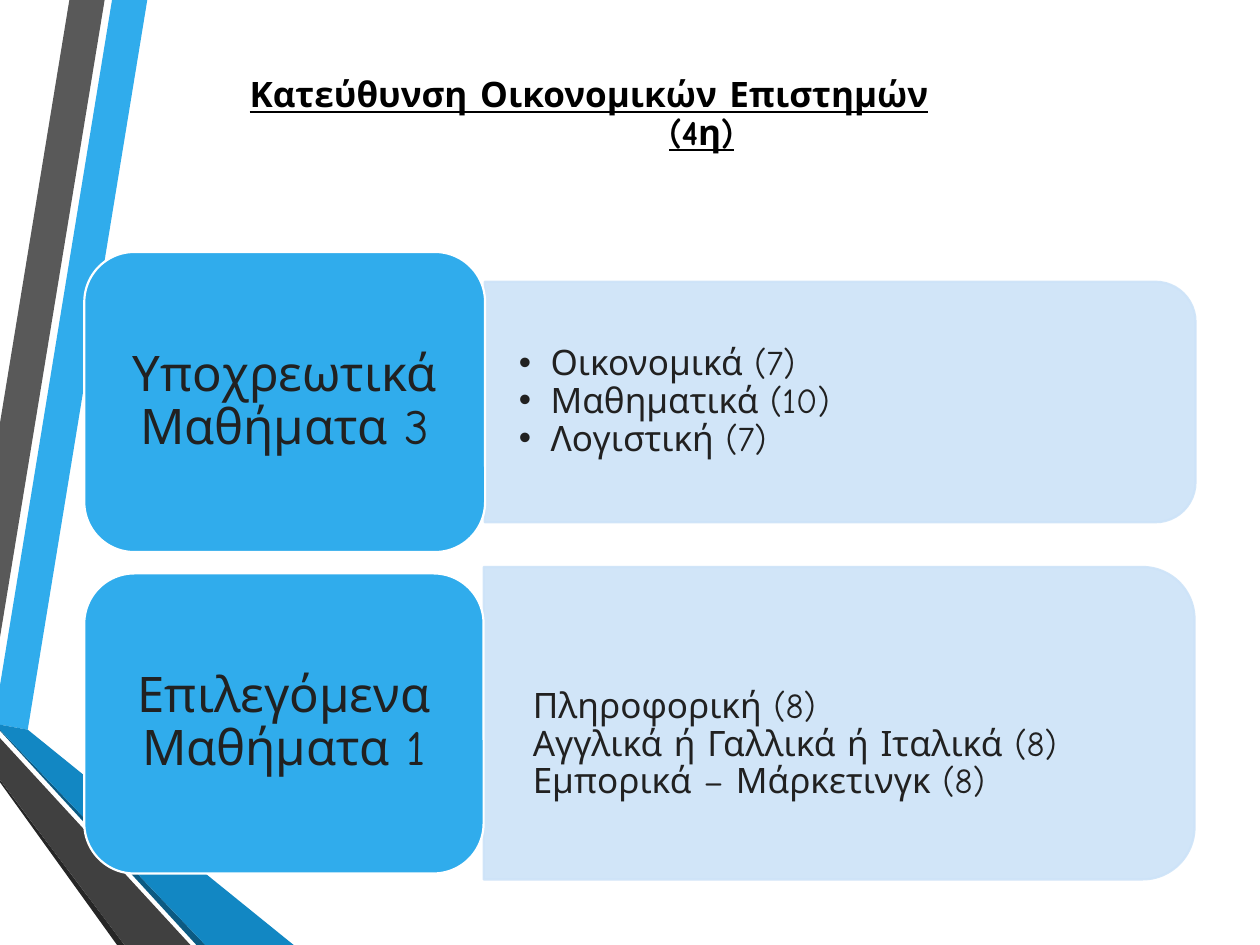
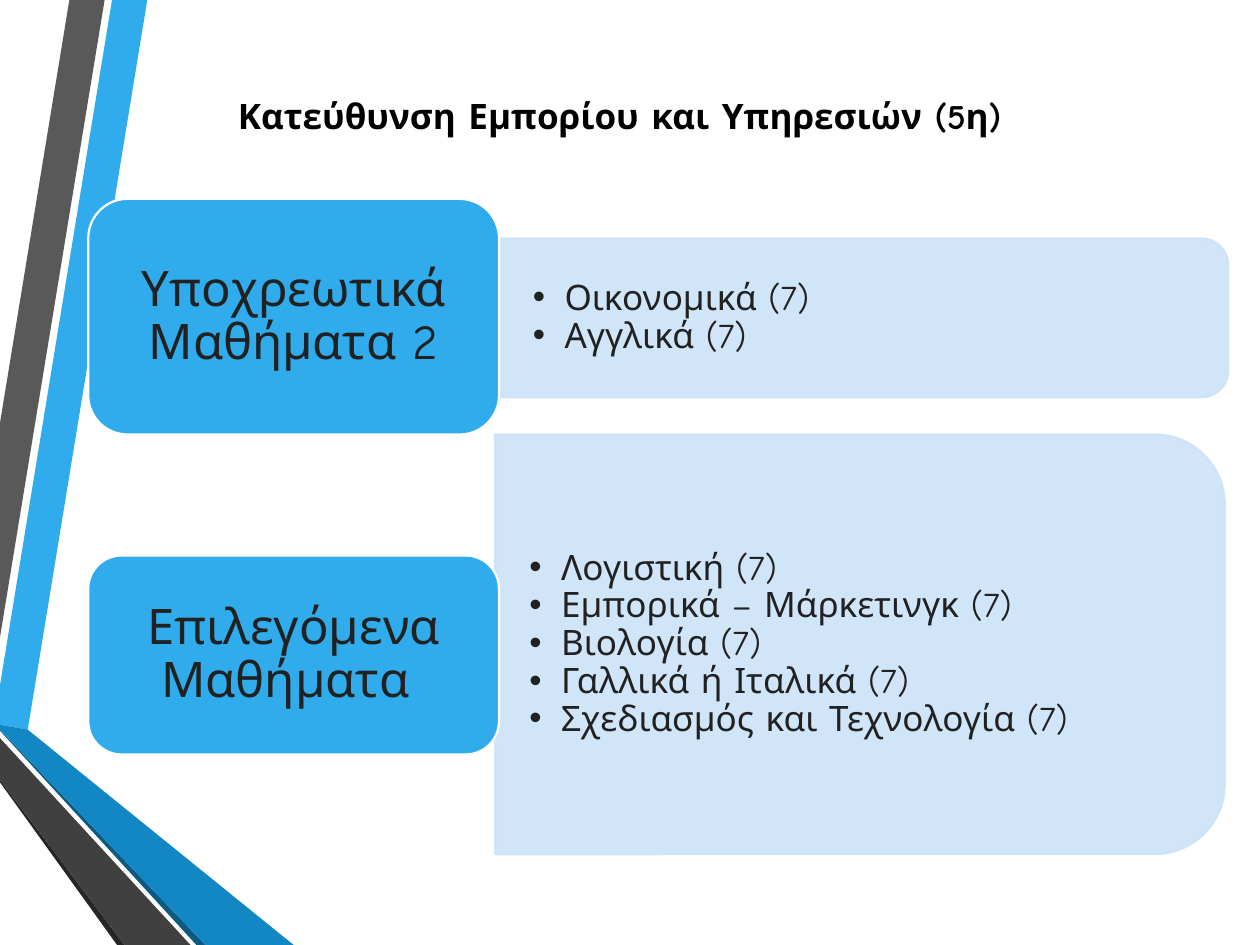
import lxml.etree
import pptx
import pptx.dml.color
import pptx.enum.shapes
import pptx.enum.text
import pptx.oxml.ns
import pptx.util

Cm = pptx.util.Cm
Pt = pptx.util.Pt
RGBColor = pptx.dml.color.RGBColor
Shapes = pptx.enum.shapes.MSO_SHAPE
Align = pptx.enum.text.PP_ALIGN
qn = pptx.oxml.ns.qn

SKY = RGBColor(0x30, 0xAC, 0xEC)
BLUE = RGBColor(0x12, 0x87, 0xC3)
DEEP_BLUE = RGBColor(0x0C, 0x5A, 0x82)
PALE_BLUE = RGBColor(0xCD, 0xE3, 0xF8)
GREY = RGBColor(0x59, 0x59, 0x59)
DARK_GREY = RGBColor(0x40, 0x40, 0x40)
CHARCOAL = RGBColor(0x26, 0x26, 0x26)
INK = RGBColor(0x21, 0x21, 0x21)
BLACK = RGBColor(0, 0, 0)
WHITE = RGBColor(0xFF, 0xFF, 0xFF)

FONT = "Comic Neue"
TWO_CONTENT = 3

# Corner points in cm of the folded ribbons along the left edge
RIBBONS = [
    (SKY, [(0, 13.82), (0, 14.61), (0.56, 14.71), (2.97, 0), (2.26, 0)]),
    (GREY, [(2.11, 0), (1.4, 0), (0, 8.53), (0, 12.85)]),
    (CHARCOAL, [(0, 15.72), (0, 15.77), (2.36, 19.05), (2.51, 19.05)]),
    (DEEP_BLUE, [(0, 14.71), (0, 14.73), (3.96, 19.05), (4.14, 19.05)]),
    (BLUE, [(0, 14.71), (4.14, 19.05), (5.92, 19.05), (0.56, 14.71), (0, 14.61)]),
    (DARK_GREY, [(0, 15.72), (2.51, 19.05), (3.84, 19.05), (0, 14.88)]),
]


def write(frame, lines, size, color=INK, bold=False, underline=False,
          align=Align.LEFT, indents=None, hanging=0, bullet=None, insets=(0.25, 0.13)):
    """Fill a text frame, one paragraph a line; indents and insets are in cm."""
    frame.word_wrap = True
    frame.auto_size = pptx.enum.text.MSO_AUTO_SIZE.NONE
    frame.vertical_anchor = pptx.enum.text.MSO_ANCHOR.MIDDLE
    frame.margin_left = frame.margin_right = Cm(insets[0])
    frame.margin_top = frame.margin_bottom = Cm(insets[1])
    for number, line in enumerate(lines):
        paragraph = frame.paragraphs[0] if number == 0 else frame.add_paragraph()
        paragraph.alignment = align
        paragraph.line_spacing = 0.9
        paragraph.space_before = paragraph.space_after = Pt(0)
        run = paragraph.add_run()
        run.text = line
        run.font.name = FONT
        run.font.size = Pt(size)
        run.font.bold = bold
        run.font.underline = underline
        run.font.color.rgb = color
        properties = paragraph._p.get_or_add_pPr()
        properties.set("marL", str(Cm(indents[number] if indents else 0)))
        properties.set("indent", str(-Cm(hanging)))
        if bullet:
            lxml.etree.SubElement(properties, qn("a:buChar"), char=bullet)
        else:
            lxml.etree.SubElement(properties, qn("a:buNone"))


def place(shape, left, top, width, height):
    shape.left, shape.top = Cm(left), Cm(top)
    shape.width, shape.height = Cm(width), Cm(height)


class Deck:
    def __init__(self):
        self.presentation = pptx.Presentation()
        self.presentation.slide_width = Cm(25.4)
        self.presentation.slide_height = Cm(19.05)
        self.layout = self.presentation.slide_layouts[TWO_CONTENT]
        self.slide = None

    def start_slide(self):
        self.slide = self.presentation.slides.add_slide(self.layout)
        self.bodies = iter(list(self.slide.placeholders)[1:])

    def paint(self, shape, fill, line=None):
        shape.shadow.inherit = False
        shape.fill.solid()
        shape.fill.fore_color.rgb = fill
        if line is None:
            shape.line.fill.background()
        else:
            shape.line.color.rgb = line
            shape.line.width = Pt(1.25)

    def ribbons(self):
        """Draw the ribbons and hand them to the layout, so every slide shows them."""
        for color, points in RIBBONS:
            corners = [(Cm(x), Cm(y)) for x, y in points]
            outline = self.slide.shapes.build_freeform(*corners[0])
            outline.add_line_segments(corners[1:], close=True)
            ribbon = outline.convert_to_shape()
            self.paint(ribbon, color)
            self.layout.shapes.element.append(ribbon._element)

    def title(self, lines, box, **text_format):
        heading = self.slide.shapes.title
        place(heading, *box)
        write(heading.text_frame, lines, 20, color=BLACK, bold=True, **text_format)

    def panel(self, left, top, width, height):
        """Pale panel rounded on its right side: an upright tab turned a quarter."""
        shift = (width - height) / 2
        panel = self.slide.shapes.add_shape(
            Shapes.ROUND_2_SAME_RECTANGLE,
            Cm(left + shift), Cm(top - shift), Cm(height), Cm(width))
        panel.rotation = 90
        self.paint(panel, PALE_BLUE, line=PALE_BLUE)
        for color in panel._element.spPr.iter(qn("a:srgbClr")):
            lxml.etree.SubElement(color, qn("a:alpha"), val="90000")

    def courses(self, names, box, bulleted, drop):
        body = next(self.bodies)
        self.slide.shapes.element.append(body._element)
        place(body, *box)
        indent = 0.64 if bulleted else 0.3
        write(body.text_frame, names, 20, indents=[indent] * len(names),
              hanging=indent if bulleted else 0, bullet="•" if bulleted else None,
              insets=(0.69, 0.36))
        body.text_frame.margin_top = Cm(0.36 + drop)

    def card(self, label, box):
        card = self.slide.shapes.add_shape(
            Shapes.ROUNDED_RECTANGLE, *(Cm(length) for length in box))
        self.paint(card, SKY, line=WHITE)
        write(card.text_frame, [label], 28, align=Align.CENTER, insets=(0.3, 0.15))

    def group(self, label, names, card_box, panel_box, bulleted=True, drop=0):
        """One row: a labelled card and the panel that lists its courses."""
        self.panel(*panel_box)
        self.courses(names, panel_box, bulleted, drop)
        self.card(label, card_box)


def main():
    deck = Deck()

    deck.start_slide()
    deck.ribbons()
    deck.title(["Κατεύθυνση Οικονομικών Επιστημών", "(4η)"],
               (4.65, 0, 16.94, 4.65), underline=True, indents=(0.13, 8.59))
    deck.group("Υποχρεωτικά Μαθήματα 3",
               ["Οικονομικά (7)", "Μαθηματικά (10)", "Λογιστική (7)"],
               card_box=(1.7, 5.08, 8.08, 6.05), panel_box=(9.77, 5.68, 14.33, 4.85))
    deck.group("Επιλεγόμενα Μαθήματα 1",
               ["Πληροφορική (8)", "Αγγλικά ή Γαλλικά ή Ιταλικά (8)",
                "Εμπορικά – Μάρκετινγκ (8)"],
               card_box=(1.7, 11.56, 8.05, 6.05), panel_box=(9.75, 11.43, 14.33, 6.3),
               bulleted=False, drop=0.87)

    deck.start_slide()
    deck.title(["Κατεύθυνση Εμπορίου και Υπηρεσιών (5η)"],
               (0.64, 0.48, 23.7, 3.81), align=Align.CENTER)
    deck.group("Υποχρεωτικά Μαθήματα 2",
               ["Οικονομικά (7)", "Αγγλικά (7)"],
               card_box=(1.78, 4.01, 8.28, 4.75), panel_box=(10.05, 4.81, 14.71, 3.2))
    deck.group("Επιλεγόμενα Μαθήματα ",
               ["Λογιστική (7)", "Εμπορικά – Μάρκετινγκ (7)", "Βιολογία (7)",
                "Γαλλικά ή Ιταλικά (7)", "Σχεδιασμός και Τεχνολογία (7)"],
               card_box=(1.78, 11.2, 8.28, 4.01), panel_box=(9.98, 8.76, 14.71, 8.46))

    deck.presentation.save("out.pptx")


if __name__ == "__main__":
    main()
